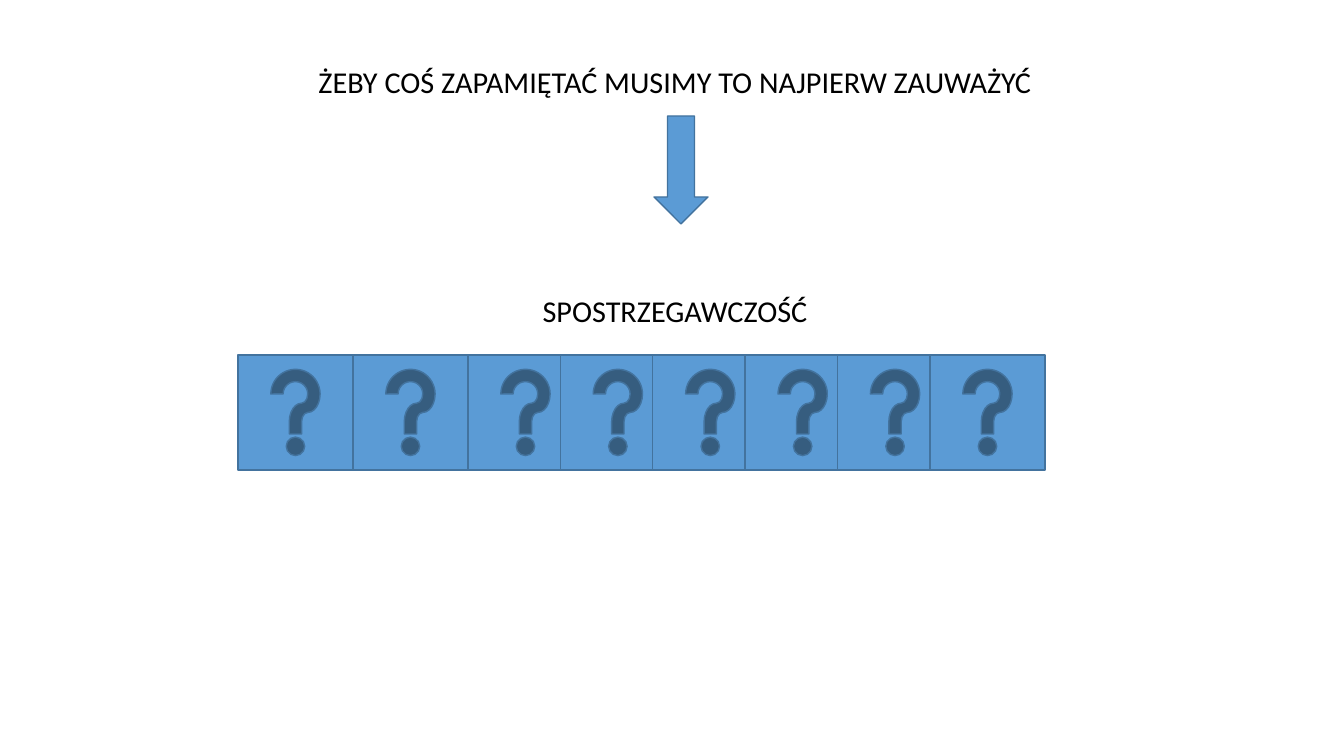
from dataclasses import dataclass

from pptx import Presentation, util as u
from pptx.dml.color import RGBColor
from pptx.enum import shapes, text

PX = 914400 / 100.8


@dataclass(frozen=True)
class Theme:
    font: str = "Calibri"
    size: float = 21.6
    ink: str = "000000"
    fill: str = "5B9BD5"
    line: str = "43739E"
    line_width: int = 1


THEME = Theme()


def px(value):
    return u.Emu(round(value * PX))


def apply_format(target, values):
    for name, value in values.items():
        setattr(target, name, value)


def add_caption(slide, box, wording):
    """One centred line of text in the middle of the box."""
    shape = slide.shapes.add_textbox(*map(px, box))
    apply_format(shape.text_frame, {
        "word_wrap": True,
        "vertical_anchor": text.MSO_ANCHOR.MIDDLE,
    })
    paragraph = shape.text_frame.paragraphs[0]
    apply_format(paragraph, {"text": wording, "alignment": text.PP_ALIGN.CENTER})
    apply_format(paragraph.font, {"name": THEME.font, "size": u.Pt(THEME.size)})
    paragraph.font.color.rgb = RGBColor.from_string(THEME.ink)


def add_blue_shape(slide, kind, box):
    shape = slide.shapes.add_shape(kind, *map(px, box))
    shape.shadow.inherit = False
    shape.fill.solid()
    shape.fill.fore_color.rgb = RGBColor.from_string(THEME.fill)
    shape.line.color.rgb = RGBColor.from_string(THEME.line)
    shape.line.width = u.Pt(THEME.line_width)


def add_question_row(slide, box):
    """Two full square steps, then overlapping squares up to the right edge."""
    left, top, width, side = box
    full_steps, overlapping_steps = 2, 5
    overlap_start = left + full_steps * side
    overlap_step = (left + width - side - overlap_start) / overlapping_steps
    lefts = [left + index * side for index in range(full_steps)]
    lefts += [overlap_start + index * overlap_step
              for index in range(overlapping_steps + 1)]
    for button_left in lefts:
        add_blue_shape(slide, shapes.MSO_SHAPE.ACTION_BUTTON_HELP,
                       (button_left, top, side, side))


def build_slide(presentation):
    slide = presentation.slides.add_slide(presentation.slide_layouts[6])
    # Statement and its conclusion
    add_caption(slide, (99, 56, 1152, 50),
                "ŻEBY COŚ ZAPAMIĘTAĆ MUSIMY TO NAJPIERW ZAUWAŻYĆ")
    add_caption(slide, (99, 285, 1152, 50), "SPOSTRZEGAWCZOŚĆ")
    # Arrow between them
    add_blue_shape(slide, shapes.MSO_SHAPE.DOWN_ARROW, (654, 116, 54, 108))
    # Row of question marks
    add_question_row(slide, (238, 355, 807, 115))


def main():
    presentation = Presentation()
    apply_format(presentation, {"slide_width": px(1344), "slide_height": px(756)})
    build_slide(presentation)
    presentation.save("out.pptx")


if __name__ == "__main__":
    main()
